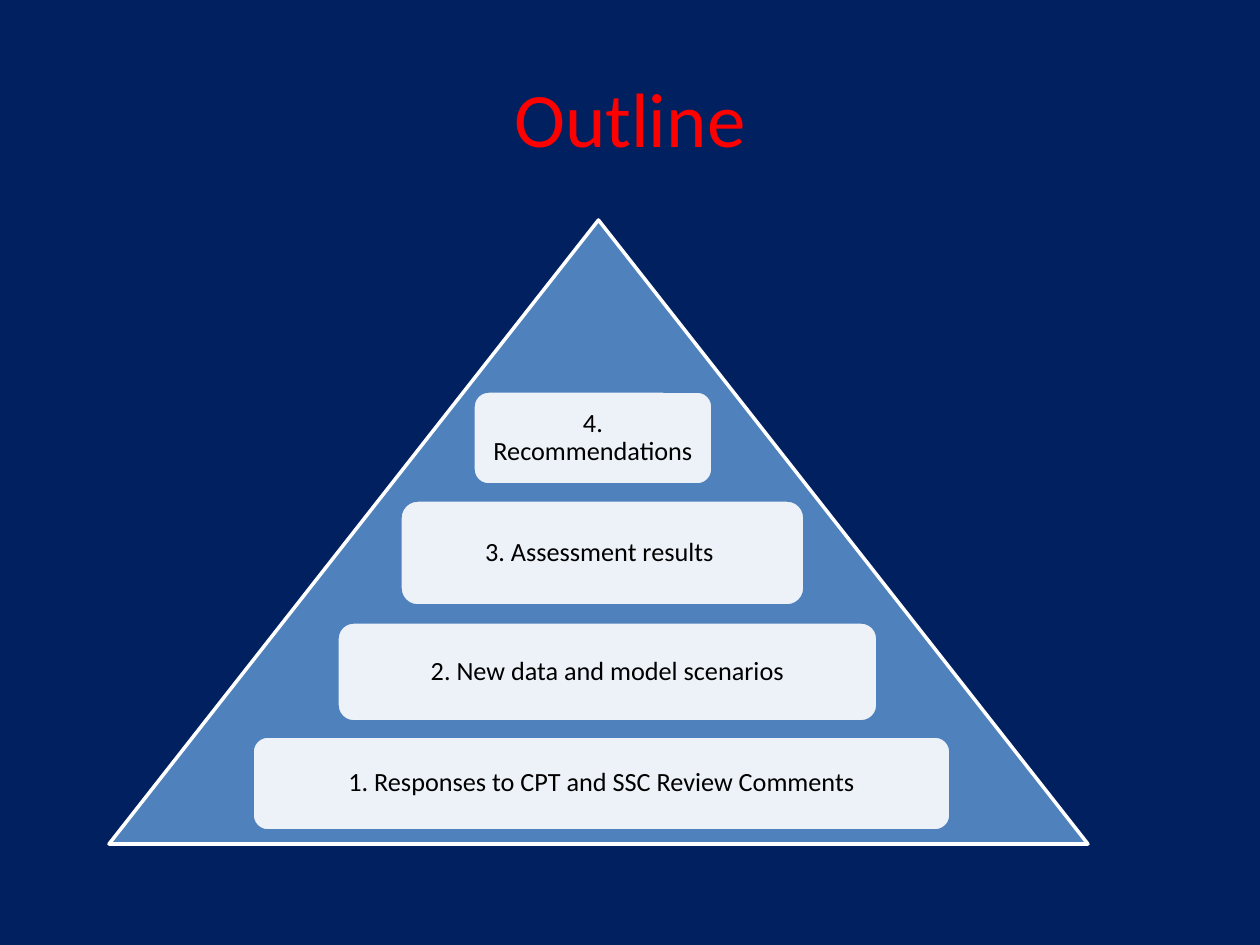
import pptx
import pptx.util
import pptx.dml.color
import pptx.enum.shapes
import pptx.enum.text
import pptx.oxml.ns
import lxml.etree

PX = 914400 // 126
COLORS = {"navy": "002060", "red": "FF0000", "blue": "4F81BD",
          "white": "FFFFFF", "black": "000000"}
SHAPES = pptx.enum.shapes.MSO_SHAPE


def paint(fill, name):
    fill.solid()
    fill.fore_color.rgb = pptx.dml.color.RGBColor.from_string(COLORS[name])


def write(shape, text, size, color, inset):
    """Put one centred line of text in the shape; inset is in px."""
    frame = shape.text_frame
    frame.word_wrap = True
    frame.vertical_anchor = pptx.enum.text.MSO_ANCHOR.MIDDLE
    frame.margin_left = frame.margin_right = inset * PX
    frame.margin_top = frame.margin_bottom = inset * PX
    line = frame.paragraphs[0]
    line.text = text
    line.alignment = pptx.enum.text.PP_ALIGN.CENTER
    line.font.name = "Calibri"
    line.font.size = pptx.util.Pt(size)
    paint(line.font.fill, color)
    return line


deck = pptx.Presentation()
deck.slide_width = pptx.util.Inches(10)
deck.slide_height = pptx.util.Inches(7.5)
slide = deck.slides.add_slide(deck.slide_layouts[6])
paint(slide.background.fill, "navy")

title = slide.shapes.add_textbox(63 * PX, 38 * PX, 1134 * PX, 158 * PX)
write(title, "Outline", 44, "red", 6)

# Pyramid
peak = slide.shapes.add_shape(
    SHAPES.ISOSCELES_TRIANGLE, 109 * PX, 220 * PX, 979 * PX, 624 * PX)
peak.shadow.inherit = False
paint(peak.fill, "blue")
paint(peak.line.fill, "white")
peak.line.width = pptx.util.Pt(2)

# Steps from top to bottom: text, left, top, width, height
steps = [
    ("4. Recommendations", 473, 391, 240, 94),
    ("3. Assessment results ", 400, 500, 405, 106),
    ("2. New data and model scenarios", 337, 622, 541, 100),
    ("1. Responses to CPT and SSC Review Comments", 252, 736, 699, 95),
]
for text, *box in steps:
    step = slide.shapes.add_shape(
        SHAPES.ROUNDED_RECTANGLE, *[side * PX for side in box])
    step.shadow.inherit = False
    paint(step.fill, "white")
    tint = step.fill._xPr.find(".//" + pptx.oxml.ns.qn("a:srgbClr"))
    lxml.etree.SubElement(tint, pptx.oxml.ns.qn("a:alpha"), val="90000")
    paint(step.line.fill, "blue")
    step.line.width = pptx.util.Pt(2)
    line = write(step, text, 15, "black", 8)
    line.line_spacing = 0.9

deck.save("out.pptx")
